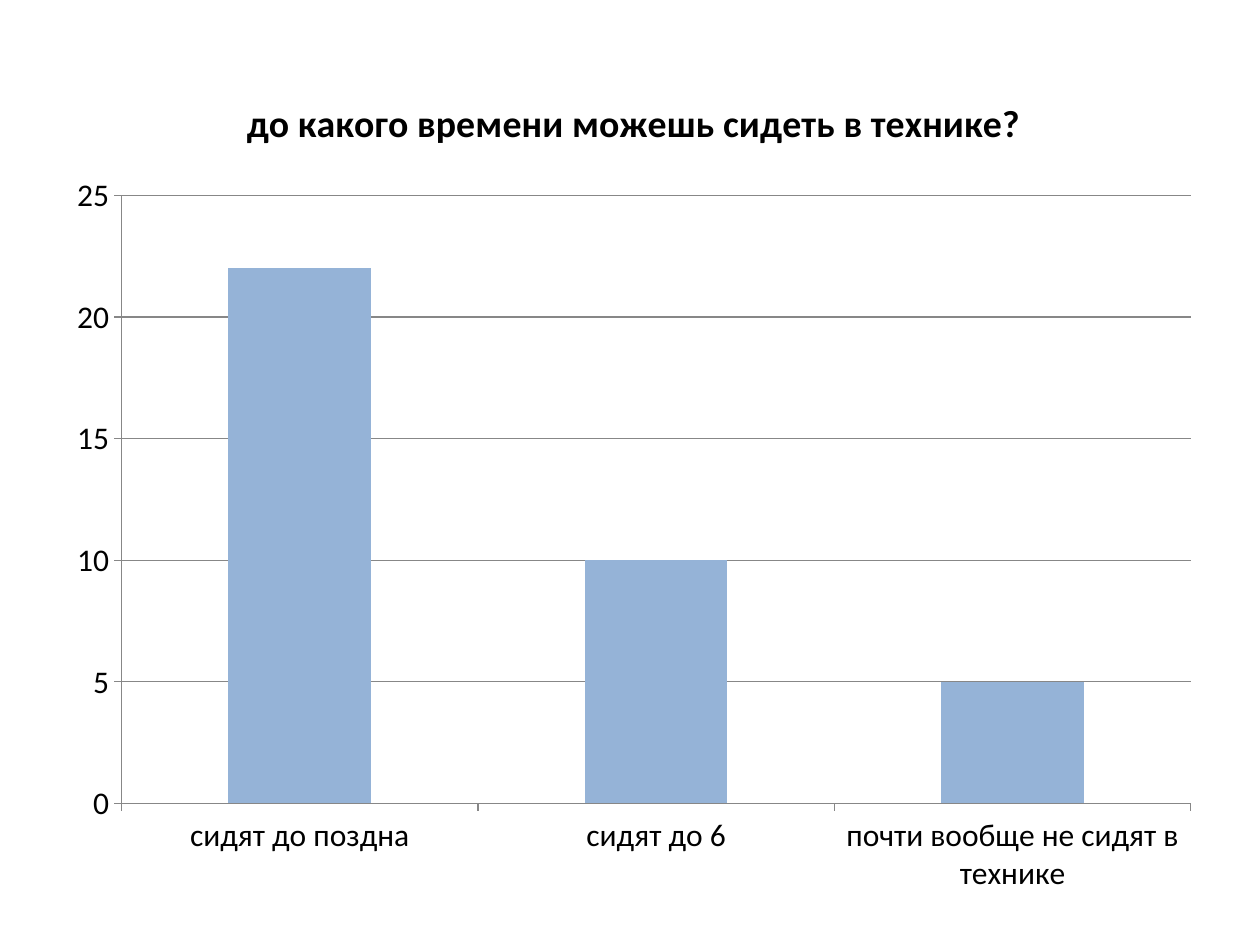
from dataclasses import dataclass

from pptx import Presentation
from pptx.chart.data import CategoryChartData
from pptx.dml.color import RGBColor
from pptx.enum.chart import XL_CHART_TYPE, XL_TICK_MARK
from pptx.util import Emu, Pt

STACKED = XL_CHART_TYPE.COLUMN_STACKED
TICK_OUT = XL_TICK_MARK.OUTSIDE
TICK_NONE = XL_TICK_MARK.NONE
EMU_PER_PX = 914400 // 126
BLANK_LAYOUT = 6

QUESTION = "до какого времени можешь сидеть в технике?"
ANSWERS = {
    "сидят до поздна": 22,
    "сидят до 6": 10,
    "почти вообще не сидят в технике": 5,
}


@dataclass(frozen=True)
class Theme:
    font: str = "Calibri"
    text: str = "000000"
    bar: str = "95B3D7"
    line: str = "878787"
    body_size: float = 18
    title_size: float = 21.6
    line_width: float = 0.75


THEME = Theme()


def px(count):
    return Emu(count * EMU_PER_PX)


def color(value):
    return RGBColor.from_string(value)


def format_font(font, size=THEME.body_size, bold=False, fill=THEME.text):
    font.name = THEME.font
    font.size = Pt(size)
    font.bold = bold
    font.color.rgb = color(fill)


def write_text(frame, text, **style):
    span = frame.paragraphs[0].add_run()
    span.text = text
    format_font(span.font, **style)


def format_line(line):
    line.color.rgb = color(THEME.line)
    line.width = Pt(THEME.line_width)


def format_axis(axis):
    axis.major_tick_mark = TICK_OUT
    axis.minor_tick_mark = TICK_NONE
    format_line(axis.format.line)
    format_font(axis.tick_labels.font)


def add_answer_chart(page, left, top, width, height):
    data = CategoryChartData()
    data.categories = list(ANSWERS)
    data.add_series(QUESTION, list(ANSWERS.values()))
    chart = page.shapes.add_chart(
        STACKED, px(left), px(top), px(width), px(height), data
    ).chart
    format_font(chart.font)
    chart.has_legend = False
    chart.has_title = True
    chart.chart_title.include_in_layout = False
    write_text(chart.chart_title.text_frame, QUESTION,
               size=THEME.title_size, bold=True)

    for axis in (chart.category_axis, chart.value_axis):
        format_axis(axis)
    scale = chart.value_axis
    scale.minimum_scale, scale.maximum_scale, scale.major_unit = 0, 25, 5
    scale.has_major_gridlines = True
    format_line(scale.major_gridlines.format.line)

    plot = chart.plots[0]
    plot.gap_width = 150
    plot.overlap = 100
    plot.vary_by_categories = False
    fill = plot.series[0].format.fill
    fill.solid()
    fill.fore_color.rgb = color(THEME.bar)


def main():
    deck = Presentation()
    deck.slide_width, deck.slide_height = px(1260), px(945)
    page = deck.slides.add_slide(deck.slide_layouts[BLANK_LAYOUT])
    add_answer_chart(page, 54, 66, 1160, 843)
    deck.save("out.pptx")


if __name__ == "__main__":
    main()
